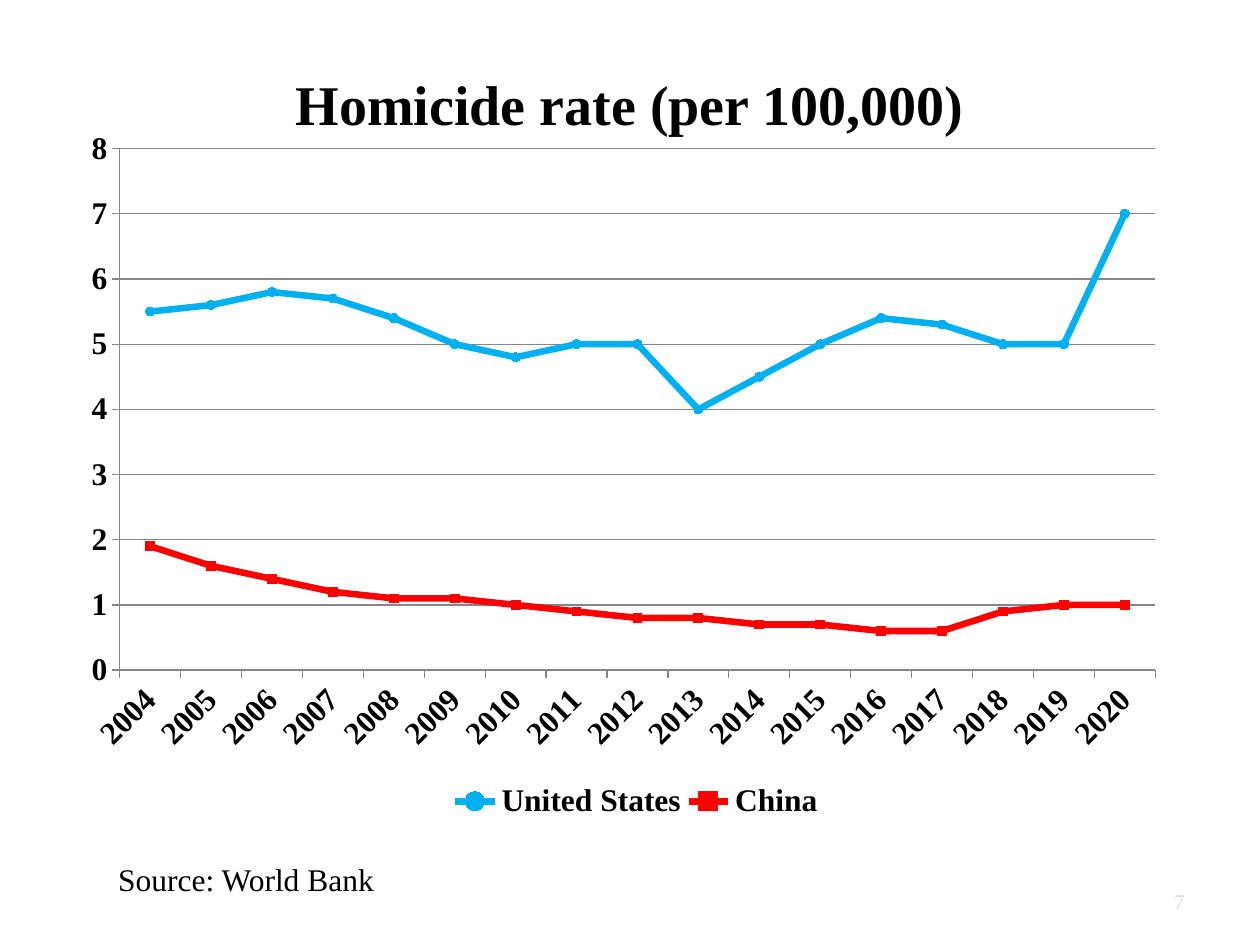
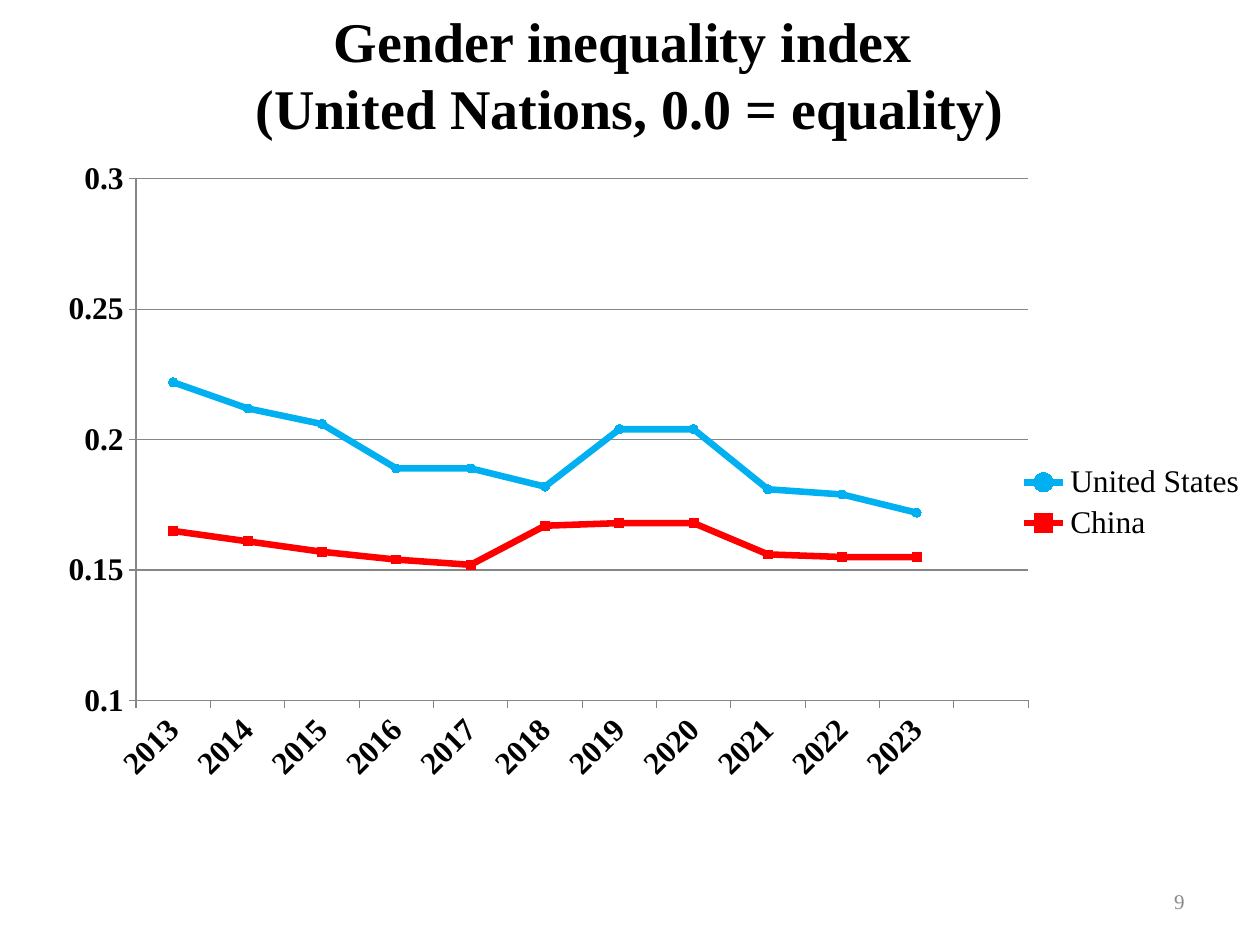
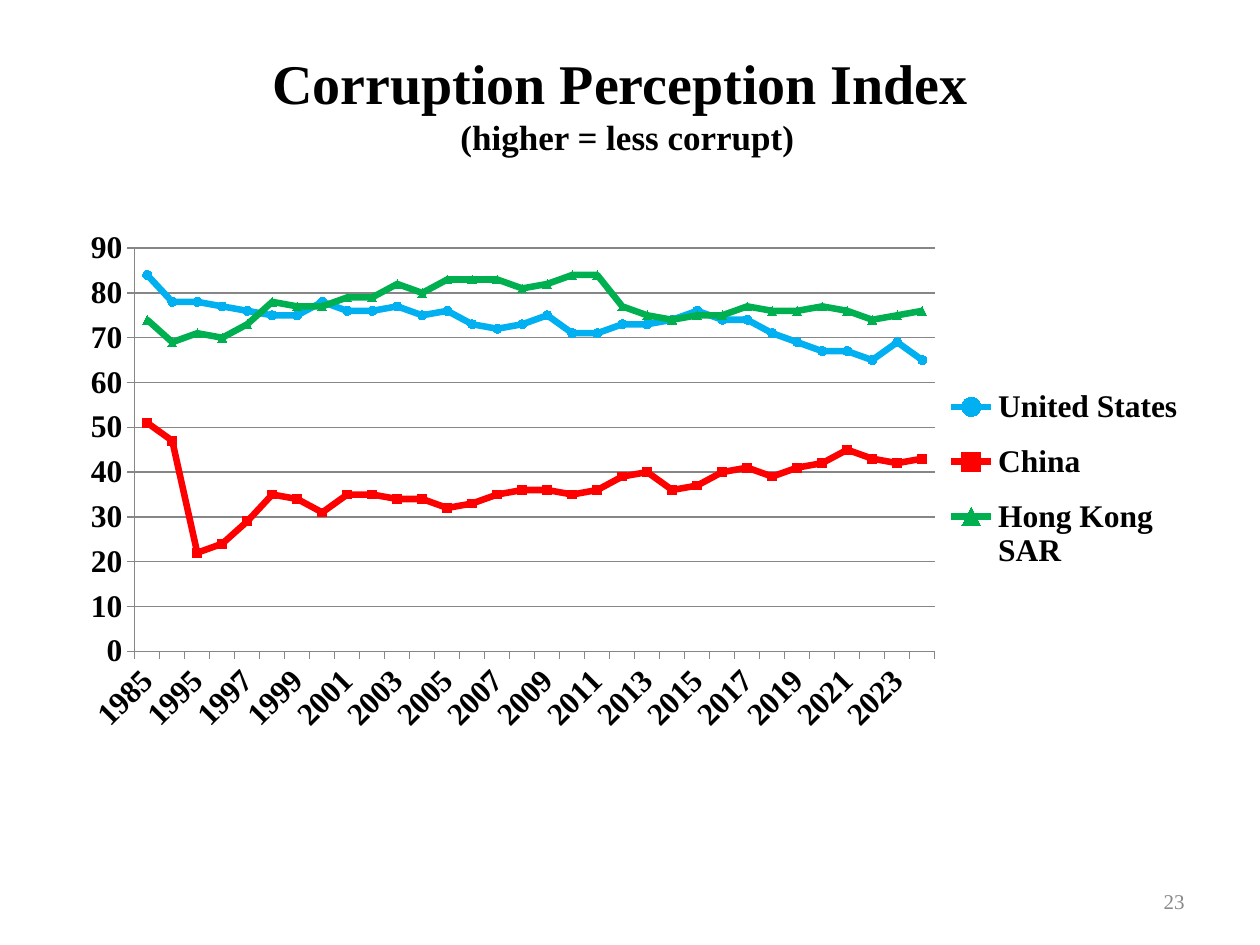
from collections import namedtuple
from dataclasses import dataclass

from lxml.etree import SubElement
from pptx import Presentation
from pptx.chart.data import CategoryChartData
from pptx.dml.color import RGBColor
from pptx.enum.chart import XL_CHART_TYPE as ChartType
from pptx.enum.chart import XL_LEGEND_POSITION as LegendPosition
from pptx.enum.chart import XL_MARKER_STYLE as Marker
from pptx.enum.chart import XL_TICK_MARK as TickMark
from pptx.enum.text import MSO_ANCHOR as Anchor
from pptx.enum.text import PP_ALIGN as Align
from pptx.oxml.ns import qn
from pptx.util import Inches, Pt

COLUMNS = 10
SLIDE_WIDTH, SLIDE_HEIGHT = Inches(10), Inches(7.5)
CELL = SLIDE_WIDTH // COLUMNS  # square grid cell, 10 columns by 7.5 rows

Box = namedtuple("Box", "left top width height")
Scale = namedtuple("Scale", "low high step")
Style = namedtuple("Style", "color marker")


@dataclass(frozen=True)
class Theme:
    font: str = "Times New Roman"
    text: str = "000000"
    grid: str = "868686"
    number: str = "898989"
    faint_number: str = "D9D9D9"
    title_size: int = 32
    subtitle_size: int = 20
    body_size: int = 18
    number_size: int = 12
    series_width: float = 3.75
    marker_size: int = 5


THEME = Theme()
SERIES_STYLES = {
    "United States": Style("00B0F0", Marker.CIRCLE),
    "China": Style("FF0000", Marker.SQUARE),
    "Hong Kong SAR": Style("00B050", Marker.TRIANGLE),
}
NUMBER_BOX = Box(7.17, 6.95, 2.33, 0.4)


def rgb(color):
    return RGBColor.from_string(color)


def to_emu(box):
    return [round(length * CELL) for length in box]


def style_font(font, size, bold=False, color=THEME.text):
    font.name, font.size, font.bold = THEME.font, Pt(size), bold
    font.color.rgb = rgb(color)


def add_text(slide, box, lines, align=Align.LEFT, anchor=Anchor.MIDDLE,
             bold=False, color=THEME.text):
    """Add a text box; lines holds (text, size) pairs, one per paragraph."""
    frame = slide.shapes.add_textbox(*to_emu(box)).text_frame
    frame.word_wrap = True
    frame.vertical_anchor = anchor
    for index, (text, size) in enumerate(lines):
        paragraph = frame.add_paragraph() if index else frame.paragraphs[0]
        paragraph.text = text
        paragraph.alignment = align
        style_font(paragraph.font, size, bold, color)


def add_title(slide, box, *lines):
    add_text(slide, box, lines, Align.CENTER, bold=True)


def add_slide_number(slide, number, color=THEME.number):
    add_text(slide, NUMBER_BOX, [(number, THEME.number_size)], Align.RIGHT, color=color)


def place_in_chart(parent, index, part, chart_box, target=None):
    """Fix a chart part at a box measured from the chart's top left corner."""
    previous = parent.find(qn("c:layout"))
    if previous is not None:
        parent.remove(previous)
    layout = SubElement(parent, qn("c:layout"))
    parent.insert(index, layout)
    manual = SubElement(layout, qn("c:manualLayout"))
    settings = [("layoutTarget", target)] if target else []
    settings += [("xMode", "edge"), ("yMode", "edge")]
    sizes = (chart_box.width, chart_box.height) * 2
    settings += [(name, f"{length / size:.4f}")
                 for name, length, size in zip("xywh", part, sizes)]
    for name, value in settings:
        SubElement(manual, qn(f"c:{name}")).set("val", value)


def style_line(line, color, width):
    line.color.rgb = rgb(color)
    line.width = Pt(width)


def style_axes(chart, scale):
    for axis in (chart.category_axis, chart.value_axis):
        axis.major_tick_mark, axis.minor_tick_mark = TickMark.OUTSIDE, TickMark.NONE
        style_line(axis.format.line, THEME.grid, 0.75)
        style_font(axis.tick_labels.font, THEME.body_size, bold=True)
    label_body = chart.category_axis._element.find(qn("c:txPr")).find(qn("a:bodyPr"))
    label_body.set("rot", "-2700000")

    values = chart.value_axis
    values.minimum_scale, values.maximum_scale, values.major_unit = scale
    values.has_major_gridlines = True
    style_line(values.major_gridlines.format.line, THEME.grid, 0.75)


def style_series(series):
    style = SERIES_STYLES[series.name]
    series.smooth = False
    style_line(series.format.line, style.color, THEME.series_width)
    marker = series.marker
    marker.style, marker.size = style.marker, THEME.marker_size
    marker.format.fill.solid()
    marker.format.fill.fore_color.rgb = rgb(style.color)
    style_line(marker.format.line, style.color, 0.75)


def add_line_chart(slide, box, plot_box, legend_box, categories, values, scale,
                   legend_bold=True):
    data = CategoryChartData()
    data.categories = categories
    for name, numbers in values.items():
        data.add_series(name, numbers)
    chart = slide.shapes.add_chart(ChartType.LINE_MARKERS, *to_emu(box), data).chart
    chart.has_title = False
    style_font(chart.font, THEME.body_size)
    style_axes(chart, scale)
    plot = chart.plots[0]
    plot.vary_by_categories = False
    for series in plot.series:
        style_series(series)

    chart.has_legend = True
    legend = chart.legend
    legend.position = LegendPosition.RIGHT
    legend.include_in_layout = False
    style_font(legend.font, THEME.body_size, legend_bold)
    place_in_chart(legend._element, 1, legend_box, box)
    plot_area = chart._chartSpace.chart.plotArea
    place_in_chart(plot_area, 0, plot_box, box, target="inner")


def years(first, last):
    return [str(year) for year in range(first, last + 1)]


def build_homicide_slide(slide):
    add_line_chart(
        slide, Box(0.5, 0.92, 9, 5.83), Box(0.45, 0.26, 8.22, 4.14),
        Box(3.05, 5.24, 3, 0.4), years(2004, 2020),
        {
            "United States": [5.5, 5.6, 5.8, 5.7, 5.4, 5, 4.8, 5, 5, 4, 4.5, 5,
                              5.4, 5.3, 5, 5, 7],
            "China": [1.9, 1.6, 1.4, 1.2, 1.1, 1.1, 1, 0.9, 0.8, 0.8, 0.7, 0.7,
                      0.6, 0.6, 0.9, 1, 1],
        },
        Scale(0, 8, 1))
    add_slide_number(slide, "7", THEME.faint_number)
    add_text(slide, Box(0.84, 6.78, 3.17, 0.71),
             [("Source: World Bank", THEME.body_size)], anchor=Anchor.TOP)
    add_title(slide, Box(0.5, 0.19, 9, 1.25),
              ("Homicide rate (per 100,000)", THEME.title_size))


def build_gender_slide(slide):
    add_title(slide, Box(0.5, -0.04, 9, 1.25),
              ("Gender inequality index ", THEME.title_size),
              ("(United Nations, 0.0 = equality)", THEME.title_size))
    add_line_chart(
        slide, Box(0.33, 1.25, 9.67, 5.47), Box(0.75, 0.17, 7.08, 4.14),
        Box(7.7, 2.39, 1.9, 0.7), years(2013, 2023) + [""],
        {
            "United States": [0.222, 0.212, 0.206, 0.189, 0.189, 0.182, 0.204,
                              0.204, 0.181, 0.179, 0.172, None],
            "China": [0.165, 0.161, 0.157, 0.154, 0.152, 0.167, 0.168, 0.168,
                      0.156, 0.155, 0.155, None],
        },
        Scale(0.1, 0.3, 0.05), legend_bold=False)
    add_slide_number(slide, "9")


def build_corruption_slide(slide):
    add_title(slide, Box(0.48, 0.19, 9, 1.25),
              ("Corruption Perception Index ", THEME.title_size),
              ("(higher = less corrupt)", THEME.subtitle_size))
    add_line_chart(
        slide, Box(0.5, 1.75, 9, 4.95), Box(0.57, 0.22, 6.35, 3.2),
        Box(7.16, 1.18, 1.85, 1.74), ["1985", "1992"] + years(1995, 2024),
        {
            "United States": [84, 78, 78, 77, 76, 75, 75, 78, 76, 76, 77, 75, 76,
                              73, 72, 73, 75, 71, 71, 73, 73, 74, 76, 74, 74, 71,
                              69, 67, 67, 65, 69, 65],
            "China": [51, 47, 22, 24, 29, 35, 34, 31, 35, 35, 34, 34, 32, 33, 35,
                      36, 36, 35, 36, 39, 40, 36, 37, 40, 41, 39, 41, 42, 45, 43,
                      42, 43],
            "Hong Kong SAR": [74, 69, 71, 70, 73, 78, 77, 77, 79, 79, 82, 80, 83,
                              83, 83, 81, 82, 84, 84, 77, 75, 74, 75, 75, 77, 76,
                              76, 77, 76, 74, 75, 76],
        },
        Scale(0, 90, 10))
    add_slide_number(slide, "23")


def main():
    presentation = Presentation()
    presentation.slide_width, presentation.slide_height = SLIDE_WIDTH, SLIDE_HEIGHT
    blank = presentation.slide_layouts[6]
    for build in (build_homicide_slide, build_gender_slide, build_corruption_slide):
        build(presentation.slides.add_slide(blank))
    presentation.save("out.pptx")


if __name__ == "__main__":
    main()
